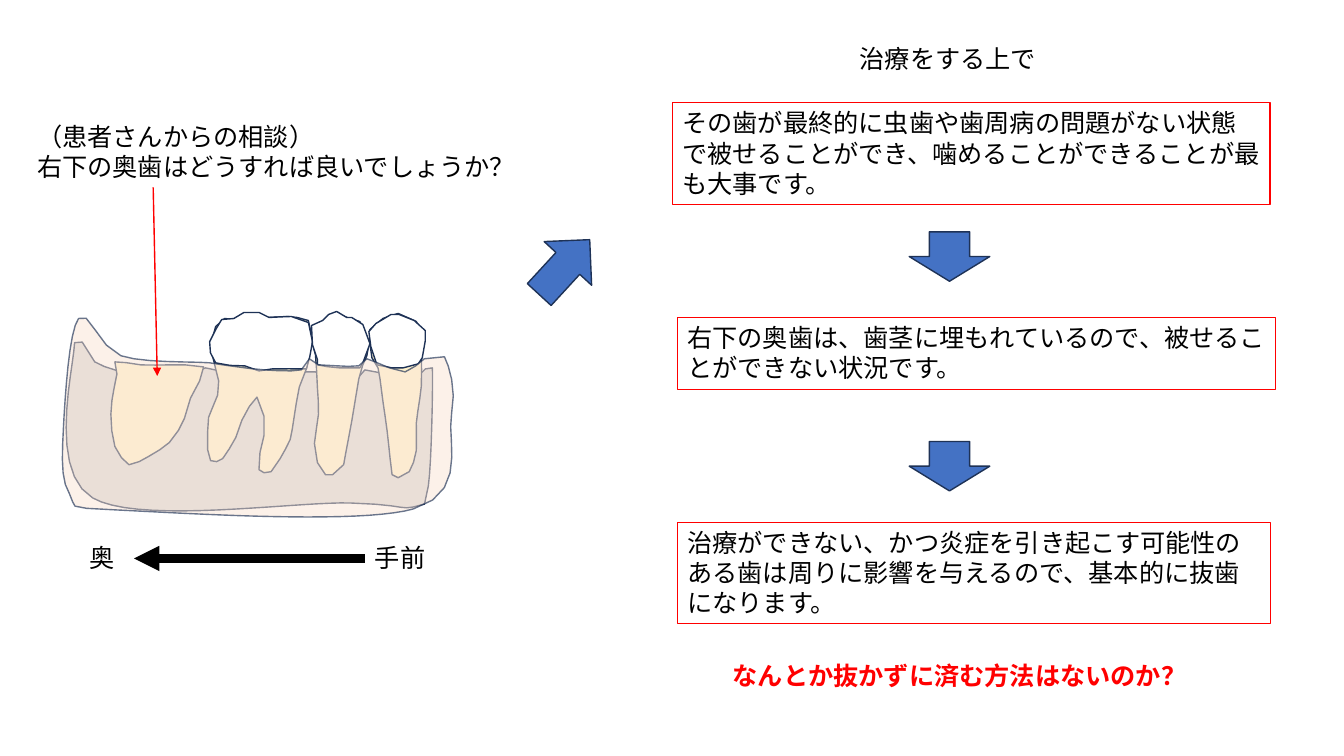
from math import dist

from lxml.etree import SubElement
from pptx import Presentation
from pptx.dml.color import RGBColor
from pptx.enum.shapes import MSO_CONNECTOR, MSO_SHAPE
from pptx.enum.text import MSO_AUTO_SIZE
from pptx.oxml.ns import qn
from pptx.util import Pt

BLACK = RGBColor(0x00, 0x00, 0x00)
WHITE = RGBColor(0xFF, 0xFF, 0xFF)
RED = RGBColor(0xFF, 0x00, 0x00)
BLUE = RGBColor(0x44, 0x72, 0xC4)
NAVY = RGBColor(0x1E, 0x32, 0x56)
BONE = RGBColor(0xD9, 0xD9, 0xD9)
ROOT = RGBColor(0xFF, 0xF2, 0xCC)
GUM = RGBColor(0xFB, 0xE5, 0xD6)

FONT = {"name": "Noto Sans CJK JP", "size": Pt(18)}
CURVE_UNIT = Pt(0.72)
CHORD_LENGTH = 14

JAW_BONE = [
    (74, 340), (94, 359), (114, 367), (142, 376), (174, 376), (204, 365), (223, 369),
    (256, 374), (294, 374), (303, 369), (313, 369), (323, 374), (355, 375), (362, 367),
    (378, 370), (384, 376), (388, 376), (403, 376), (418, 370), (422, 366), (429, 365),
    (425, 482), (410, 503), (347, 499), (92, 494)]
MOLAR_ROOT = [
    (214, 324), (223, 316), (232, 317), (243, 311), (256, 312), (266, 315), (285, 314),
    (295, 315), (306, 318), (309, 332), (308, 347), (304, 366), (297, 384), (294, 400),
    (290, 426), (288, 436), (278, 455), (269, 468), (262, 469), (257, 466), (258, 449),
    (262, 432), (262, 413), (255, 394), (240, 417), (234, 434), (221, 455), (215, 458),
    (209, 457), (206, 446), (206, 429), (207, 414), (216, 392), (217, 378), (214, 366),
    (211, 353), (210, 339)]
PREMOLAR_ROOT = [
    (310, 326), (318, 320), (323, 320), (334, 311), (347, 316), (357, 319), (363, 331),
    (366, 341), (364, 353), (360, 362), (356, 376), (353, 394), (349, 418), (343, 450),
    (341, 461), (330, 471), (323, 471), (315, 459), (312, 440), (316, 411), (315, 385),
    (314, 365), (313, 352), (310, 341)]
BURIED_ROOT = [
    (114, 359), (140, 362), (167, 362), (184, 362), (202, 364), (198, 378), (189, 395),
    (183, 415), (168, 439), (138, 458), (128, 461), (114, 443), (110, 411), (113, 386),
    (116, 371)]
MOLAR_CROWN = [
    (214, 360), (243, 363), (257, 368), (270, 366), (302, 366), (304, 366), (310, 339),
    (306, 320), (289, 314), (267, 315), (257, 310), (242, 310), (232, 316), (220, 317),
    (214, 327), (208, 339)]
PREMOLAR_CROWN = [
    (315, 362), (337, 365), (357, 365), (360, 360), (367, 341), (360, 322), (349, 315),
    (344, 315), (334, 309), (326, 312), (320, 318), (309, 323), (310, 342), (315, 357)]
FRONT_ROOT = [
    (375, 365), (369, 355), (367, 341), (367, 327), (380, 316), (395, 311), (413, 319),
    (419, 331), (418, 352), (418, 383), (413, 420), (413, 447), (406, 468), (395, 474),
    (389, 471), (387, 455), (384, 427), (380, 399), (377, 376)]
FRONT_CROWN = [
    (374, 362), (389, 365), (400, 365), (415, 361), (419, 355), (422, 338), (422, 328),
    (411, 318), (396, 312), (388, 312), (373, 321), (366, 329), (368, 344)]
GUM_OUTLINE = [
    (78, 316), (63, 424), (69, 490), (116, 506), (410, 505), (448, 411), (441, 354),
    (421, 356), (402, 369), (372, 359), (364, 356), (356, 363), (334, 363), (316, 362),
    (307, 356), (299, 367), (262, 367), (221, 362), (208, 360), (120, 353)]

TEETH = [
    (JAW_BONE, BONE), (MOLAR_ROOT, ROOT), (PREMOLAR_ROOT, ROOT), (BURIED_ROOT, ROOT),
    (MOLAR_CROWN, WHITE), (PREMOLAR_CROWN, WHITE), (FRONT_ROOT, ROOT), (FRONT_CROWN, WHITE)]

LABELS = [
    ((56.88, 383.76, 32.4, 28.8), ["奥"], {}),
    ((260.64, 383.76, 51.12, 28.8), ["手前"], {}),
    ((19.44, 82.8, 360, 51.12),
     ["（患者さんからの相談）", "右下の奥歯はどうすれば良いでしょうか？"], {}),
    ((606.96, 27.36, 141.84, 28.8), ["治療をする上で"], {}),
    ((516.24, 468, 342, 28.8), ["なんとか抜かずに済む方法はないのか？"],
     {"color": RED, "bold": True})]

STEPS = [
    ((480.24, 73.44, 426.96, 72.72),
     "その歯が最終的に虫歯や歯周病の問題がない状態で被せることができ、噛めることができることが最も大事です。"),
    ((483.84, 226.8, 426.96, 51.12),
     "右下の奥歯は、歯茎に埋もれているので、被せることができない状況です。"),
    ((483.84, 372.96, 423.36, 72.72),
     "治療ができない、かつ炎症を引き起こす可能性のある歯は周りに影響を与えるので、基本的に抜歯になります。")]


def smooth_loop(anchors):
    points = []
    count = len(anchors)
    for index in range(count):
        before, start, end, after = (anchors[(index + step) % count] for step in (-1, 0, 1, 2))
        chords = max(1, round(dist(start, end) / CHORD_LENGTH))
        for step in range(chords):
            t = step / chords
            points.append(tuple(
                CURVE_UNIT * (b + (c - a) * t / 2 + (2 * a - 5 * b + 4 * c - d) * t ** 2 / 2
                              + (3 * b - a - 3 * c + d) * t ** 3 / 2)
                for a, b, c, d in zip(before, start, end, after)))
    return points


def set_alpha(parent, percent):
    fill = parent.find(qn("a:solidFill"))
    SubElement(fill[0], qn("a:alpha")).set("val", str(percent * 1000))


class SlideBuilder:
    def __init__(self, slide, font):
        self.slide = slide
        self.font = font

    def paint(self, shape, fill):
        shape.shadow.inherit = False
        shape.fill.solid()
        shape.fill.fore_color.rgb = fill
        shape.line.color.rgb = NAVY
        shape.line.width = Pt(1)

    def outline(self, shapes, anchors, fill):
        points = smooth_loop(anchors)
        builder = shapes.build_freeform(*points[0], scale=1.0)
        builder.add_line_segments(points[1:], close=True)
        shape = builder.convert_to_shape()
        self.paint(shape, fill)
        return shape

    def text(self, box, lines, wrap=False, color=BLACK, **extra):
        shape = self.slide.shapes.add_textbox(*map(Pt, box))
        frame = shape.text_frame
        frame.word_wrap = wrap
        frame.auto_size = MSO_AUTO_SIZE.SHAPE_TO_FIT_TEXT
        for index, line in enumerate(lines):
            paragraph = frame.add_paragraph() if index else frame.paragraphs[0]
            run = paragraph.add_run()
            run.text = line
            for attribute, value in {**self.font, **extra}.items():
                setattr(run.font, attribute, value)
            run.font.color.rgb = color
            east_asian = SubElement(run._r.get_or_add_rPr(), qn("a:ea"))
            east_asian.set("typeface", self.font["name"])
        return shape

    def framed_text(self, box, text):
        shape = self.text(box, [text], wrap=True)
        shape.line.color.rgb = RED
        shape.line.width = Pt(0.75)

    def block_arrow(self, kind, box, rotation=0):
        shape = self.slide.shapes.add_shape(kind, *map(Pt, box))
        self.paint(shape, BLUE)
        shape.rotation = rotation

    def line_arrow(self, ends, color, width):
        connector = self.slide.shapes.add_connector(MSO_CONNECTOR.STRAIGHT, *map(Pt, ends))
        connector.line.color.rgb = color
        connector.line.width = Pt(width)
        SubElement(connector.line._get_or_add_ln(), qn("a:tailEnd")).set("type", "triangle")
        SubElement(connector._element.spPr, qn("a:effectLst"))


def main():
    presentation = Presentation()
    presentation.slide_width, presentation.slide_height = Pt(960), Pt(540)
    slide = presentation.slides.add_slide(presentation.slide_layouts[6])
    builder = SlideBuilder(slide, FONT)

    teeth = slide.shapes.add_group_shape()
    for anchors, fill in TEETH:
        builder.outline(teeth.shapes, anchors, fill)
    gum = builder.outline(slide.shapes, GUM_OUTLINE, GUM)
    set_alpha(gum._element.spPr, 52)
    set_alpha(gum.line._get_or_add_ln(), 65)

    for box, lines, style in LABELS:
        builder.text(box, lines, **style)
    builder.line_arrow((260.64, 398.88, 95.76, 398.88), BLACK, 6)
    builder.line_arrow((109.44, 133.92, 112.32, 268.56), RED, 1)

    builder.block_arrow(MSO_SHAPE.RIGHT_ARROW, (376.56, 167.76, 53.28, 46.08), 312.6)
    for box, text in STEPS:
        builder.framed_text(box, text)
    for top in (165.6, 315.36):
        builder.block_arrow(MSO_SHAPE.DOWN_ARROW, (649.44, top, 57.6, 35.28))
    presentation.save("out.pptx")


if __name__ == "__main__":
    main()
